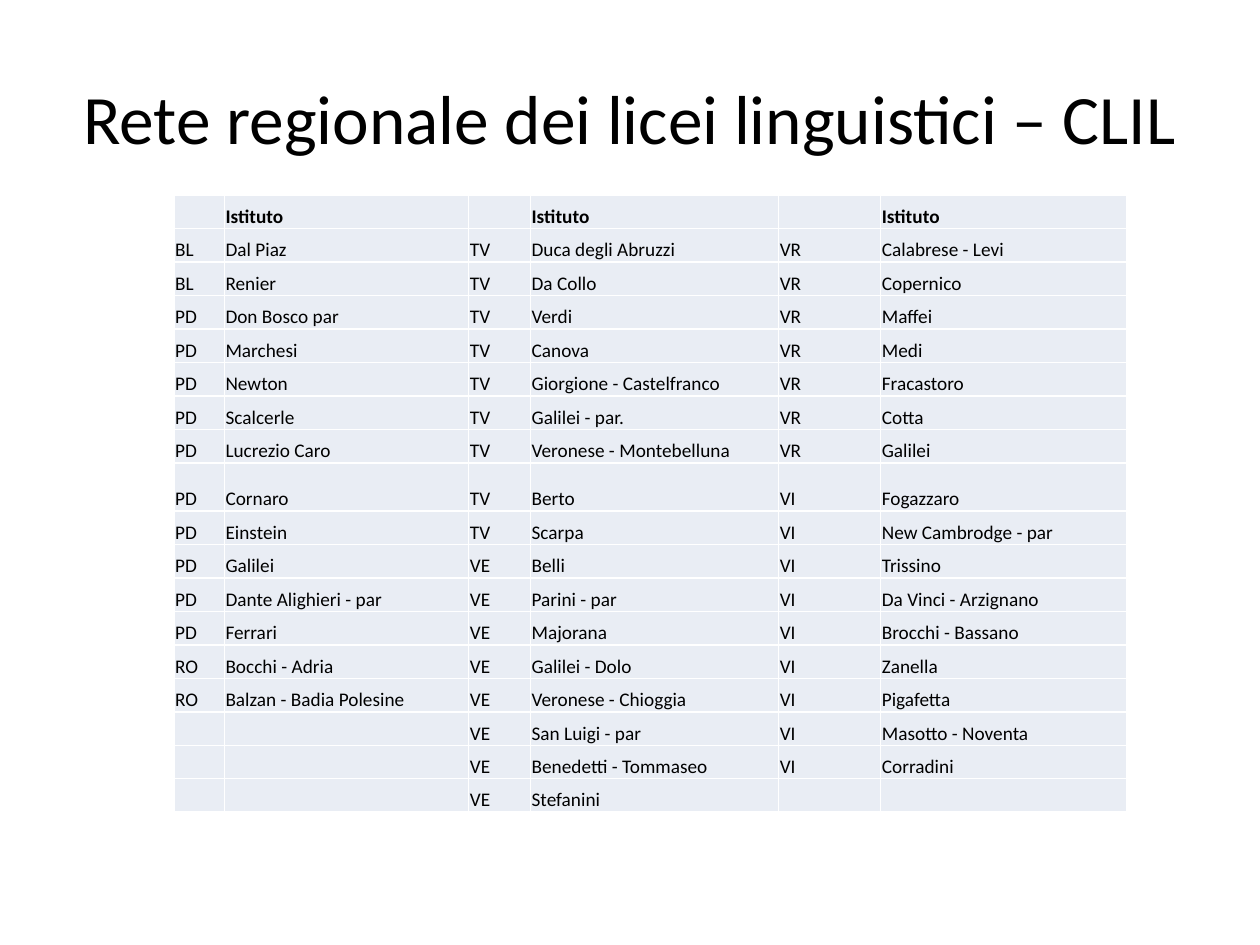
from dataclasses import dataclass
from itertools import zip_longest

from lxml.etree import SubElement
from pptx import Presentation
from pptx.dml.color import RGBColor
from pptx.enum.text import MSO_ANCHOR, PP_ALIGN
from pptx.oxml.ns import qn
from pptx.util import Inches, Pt

TITLE = "Rete regionale dei licei linguistici – CLIL"
BLOCKS = [
    {
        "BL": ["Dal Piaz", "Renier"],
        "PD": ["Don Bosco par", "Marchesi", "Newton", "Scalcerle", "Lucrezio Caro",
               "Cornaro", "Einstein", "Galilei", "Dante Alighieri - par", "Ferrari"],
        "RO": ["Bocchi - Adria", "Balzan - Badia Polesine"],
    },
    {
        "TV": ["Duca degli Abruzzi", "Da Collo", "Verdi", "Canova",
               "Giorgione - Castelfranco", "Galilei - par.",
               "Veronese - Montebelluna", "Berto", "Scarpa"],
        "VE": ["Belli", "Parini - par", "Majorana", "Galilei - Dolo",
               "Veronese - Chioggia", "San Luigi - par", "Benedetti - Tommaseo",
               "Stefanini"],
    },
    {
        "VR": ["Calabrese - Levi", "Copernico", "Maffei", "Medi", "Fracastoro",
               "Cotta", "Galilei"],
        "VI": ["Fogazzaro", "New Cambrodge - par", "Trissino", "Da Vinci - Arzignano",
               "Brocchi - Bassano", "Zanella", "Pigafetta", "Masotto - Noventa",
               "Corradini"],
    },
]
COLUMN_WIDTHS = [4, 19.4, 4.9, 19.7, 8.1, 19.5]
TABLE_HEIGHT = 49
TALL_ROW, TALL_HEIGHT = 8, 3.85


def color(value):
    """Turn a hex string into a colour."""
    return RGBColor.from_string(value)


def write(paragraph, text, *, font, size, fill, bold=False, align=PP_ALIGN.LEFT):
    """Put formatted text in a paragraph, sizing it even when it is empty."""
    paragraph.alignment = align
    if not text:
        SubElement(paragraph._p, qn("a:endParaRPr"), sz=str(size * 100))
        return
    run = paragraph.add_run()
    run.text = text
    run.font.name = font
    run.font.size = Pt(size)
    run.font.bold = bold
    run.font.color.rgb = color(fill)


def school_rows(blocks):
    """Lay the provinces and their schools side by side under a heading row."""
    columns = [
        [(province, school) for province, schools in block.items() for school in schools]
        for block in blocks
    ]
    lines = zip_longest(*columns, fillvalue=("", ""))
    heading = ["", "Istituto"] * len(blocks)
    return [heading] + [[text for pair in line for text in pair] for line in lines]


@dataclass
class SlideBuilder:
    """Hold the style and the current slide, on a grid of 100 columns by 75 rows."""

    presentation: object
    slide: object
    font: str = "Calibri"
    ink: str = "000000"
    cell_fill: str = "E9EDF4"
    border: str = "FFFFFF"

    def across(self, columns):
        """Convert grid columns to a length."""
        return round(self.presentation.slide_width * columns / 100)

    def down(self, rows):
        """Convert grid rows to a length."""
        return round(self.presentation.slide_height * rows / 75)

    def title(self, text, left, top, width, height):
        """Place and fill the title placeholder."""
        shape = self.slide.shapes.title
        shape.left, shape.top = self.across(left), self.down(top)
        shape.width, shape.height = self.across(width), self.down(height)
        frame = shape.text_frame
        frame.word_wrap = True
        frame.vertical_anchor = MSO_ANCHOR.MIDDLE
        write(frame.paragraphs[0], text, font=self.font, size=39.6, fill=self.ink,
              align=PP_ALIGN.CENTER)

    def cell(self, cell, text, bold):
        """Format one table cell and write its text."""
        properties = cell._tc.get_or_add_tcPr()
        for side in ("a:lnL", "a:lnR", "a:lnT", "a:lnB"):
            line = SubElement(properties, qn(side), w=str(Pt(1)))
            solid = SubElement(line, qn("a:solidFill"))
            SubElement(solid, qn("a:srgbClr"), val=self.border)
        cell.fill.solid()
        cell.fill.fore_color.rgb = color(self.cell_fill)
        cell.margin_left = cell.margin_right = cell.margin_top = Inches(0.01)
        cell.margin_bottom = 0
        cell.vertical_anchor = MSO_ANCHOR.BOTTOM
        write(cell.text_frame.paragraphs[0], text, font=self.font, size=11,
              fill=self.ink, bold=bold)

    def table(self, rows, left, top):
        """Add the table of schools, with one taller row."""
        shape = self.slide.shapes.add_table(
            len(rows), len(COLUMN_WIDTHS), self.across(left), self.down(top),
            self.across(sum(COLUMN_WIDTHS)), self.down(TABLE_HEIGHT))
        table = shape.table
        table.horz_banding = False
        for column, width in zip(table.columns, COLUMN_WIDTHS):
            column.width = self.across(width)
        row_height = (TABLE_HEIGHT - TALL_HEIGHT) / (len(rows) - 1)
        for index, (row, texts) in enumerate(zip(table.rows, rows)):
            row.height = self.down(TALL_HEIGHT if index == TALL_ROW else row_height)
            for cell, text in zip(row.cells, texts):
                self.cell(cell, text, bold=index == 0)


def main():
    """Build and save the slide."""
    presentation = Presentation()
    presentation.slide_width, presentation.slide_height = Inches(10), Inches(7.5)
    slide = presentation.slides.add_slide(presentation.slide_layouts[5])
    builder = SlideBuilder(presentation, slide)
    builder.title(TITLE, 5, 3, 90, 12.5)
    builder.table(school_rows(BLOCKS), 13.8, 15.5)
    presentation.save("out.pptx")


if __name__ == "__main__":
    main()
